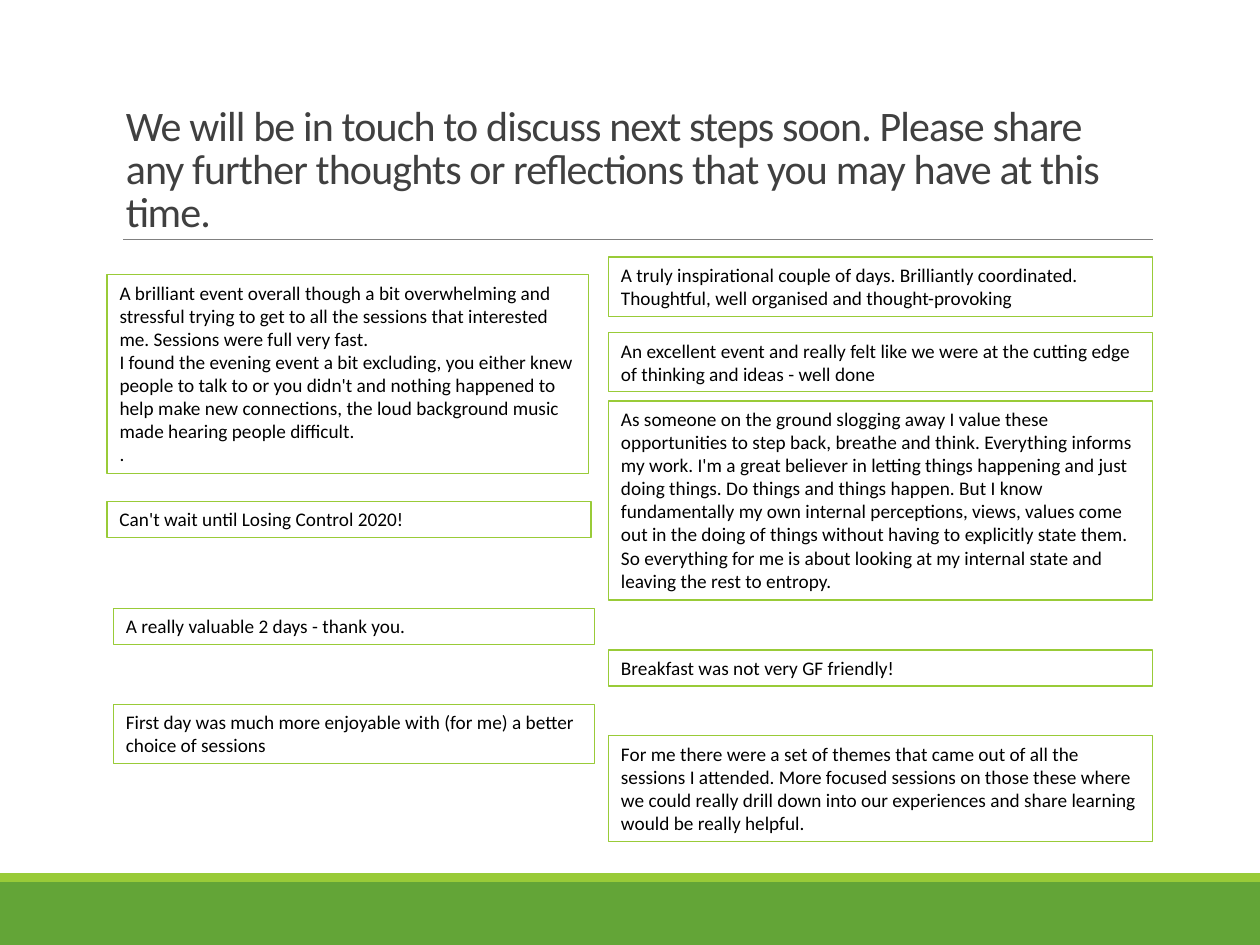
from typing import NamedTuple

from lxml import etree
from pptx import Presentation
from pptx.dml.color import RGBColor
from pptx.enum import shapes, text
from pptx.oxml.ns import qn
from pptx.util import Pt

FONT = "Calibri"
GREEN, LIME, GREY = "63A537", "99CB38", "808080"
INK, BLACK = "404040", "000000"
SLIDE_W, SLIDE_H = 720, 540
LEFT_X, INDENTED_X, RIGHT_X = 61.2, 64.8, 347.76
LEFT_W, RIGHT_W = 275.04, 311.04
LINE_H, PADDING = 13.32, 7.2


class Comment(NamedTuple):
    left: float
    top: float
    width: float
    rows: int
    lines: tuple[str, ...]


TITLE = (
    "We will be in touch to discuss next steps soon. Please share any further "
    "thoughts or reflections that you may have at this time."
)

COMMENTS = [
    Comment(RIGHT_X, 146.88, RIGHT_W, 2, (
        "A truly inspirational couple of days. Brilliantly coordinated. "
        "Thoughtful, well organised and thought-provoking",)),
    Comment(RIGHT_X, 190.08, RIGHT_W, 2, (
        "An excellent event and really felt like we were at the cutting edge "
        "of thinking and ideas - well done",)),
    Comment(LEFT_X, 156.96, LEFT_W, 8, (
        "A brilliant event overall though a bit overwhelming and stressful "
        "trying to get to all the sessions that interested me. Sessions were "
        "full very fast.",
        "I found the evening event a bit excluding, you either knew people to "
        "talk to or you didn't and nothing happened to help make new "
        "connections, the loud background music made hearing people difficult.",
        ".")),
    Comment(RIGHT_X, 229.1, RIGHT_W, 8, (
        "As someone on the ground slogging away I value these opportunities to "
        "step back, breathe and think. Everything informs my work. I'm a great "
        "believer in letting things happening and just doing things. Do things "
        "and things happen. But I know fundamentally my own internal "
        "perceptions, views, values come out in the doing of things without "
        "having to explicitly state them. So everything for me is about looking "
        "at my internal state and leaving the rest to entropy.",)),
    Comment(RIGHT_X, 371.52, RIGHT_W, 1, ("Breakfast was not very GF friendly!",)),
    Comment(INDENTED_X, 347.76, LEFT_W, 1, ("A really valuable 2 days - thank you.",)),
    Comment(LEFT_X, 286.56, 276.48, 1, ("Can't wait until Losing Control 2020!",)),
    Comment(INDENTED_X, 402.48, LEFT_W, 2, (
        "First day was much more enjoyable with (for me) a better choice of "
        "sessions",)),
    Comment(RIGHT_X, 420.48, RIGHT_W, 4, (
        "For me there were a set of themes that came out of all the sessions I "
        "attended. More focused sessions on those these where we could really "
        "drill down into our experiences and share learning would be really "
        "helpful.",)),
]


def rgb(value: str) -> RGBColor:
    return RGBColor.from_string(value)


def add_run(p, words: str, size: float, color: str):
    r = p.add_run()
    r.text = words
    r.font.name = FONT
    r.font.size = Pt(size)
    r.font.color.rgb = rgb(color)
    return r


def add_rect(s, left: float, top: float, width: float, height: float):
    sp = s.shapes.add_shape(
        shapes.MSO_SHAPE.RECTANGLE, Pt(left), Pt(top), Pt(width), Pt(height))
    sp.shadow.inherit = False
    return sp


def add_band(s, top: float, height: float, color: str) -> None:
    sp = add_rect(s, 0, top, SLIDE_W, height)
    sp.fill.solid()
    sp.fill.fore_color.rgb = rgb(color)
    sp.line.fill.background()


def add_rule(s, left: float, right: float, y: float) -> None:
    line = s.shapes.add_connector(
        shapes.MSO_CONNECTOR.STRAIGHT, Pt(left), Pt(y), Pt(right), Pt(y))
    line.line.color.rgb = rgb(GREY)
    line.line.width = Pt(0.5)
    etree.SubElement(line._element.spPr, qn("a:effectLst"))


def add_title(s) -> None:
    sp = s.shapes.add_textbox(Pt(64.8), Pt(23.76), Pt(594), Pt(114.48))
    tf = sp.text_frame
    tf.word_wrap = True
    tf.vertical_anchor = text.MSO_ANCHOR.BOTTOM
    p = tf.paragraphs[0]
    p.line_spacing = 0.85
    r = add_run(p, TITLE, 24, INK)
    r.font._element.set("spc", "-50")


def add_comment(s, comment: Comment) -> None:
    height = comment.rows * LINE_H + PADDING
    sp = add_rect(s, comment.left, comment.top, comment.width, height)
    sp.fill.background()
    sp.line.color.rgb = rgb(LIME)
    sp.line.width = Pt(0.75)
    tf = sp.text_frame
    tf.word_wrap = True
    tf.auto_size = text.MSO_AUTO_SIZE.SHAPE_TO_FIT_TEXT
    tf.vertical_anchor = text.MSO_ANCHOR.TOP
    p = tf.paragraphs[0]
    p.alignment = text.PP_ALIGN.LEFT
    for i, words in enumerate(comment.lines):
        if i:
            p.add_line_break()
        add_run(p, words, 11, BLACK)


def main() -> None:
    prs = Presentation()
    prs.slide_width, prs.slide_height = Pt(SLIDE_W), Pt(SLIDE_H)
    s = prs.slides.add_slide(prs.slide_layouts[6])
    add_band(s, 504, 36, GREEN)
    add_band(s, 498.96, 5.04, LIME)
    add_rule(s, 70.56, 658.8, 136.8)
    add_title(s)
    for comment in COMMENTS:
        add_comment(s, comment)
    prs.save("out.pptx")


if __name__ == "__main__":
    main()
